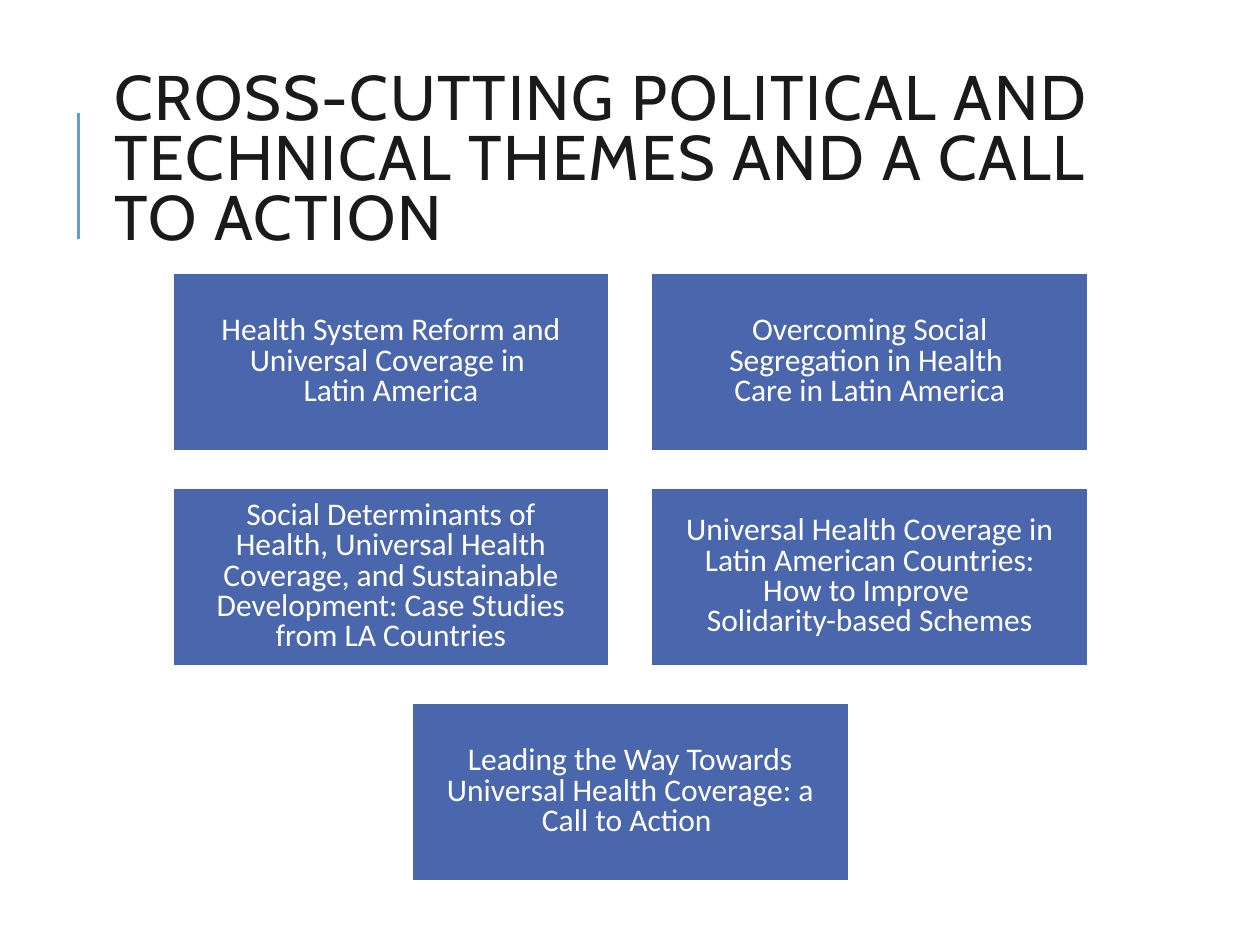
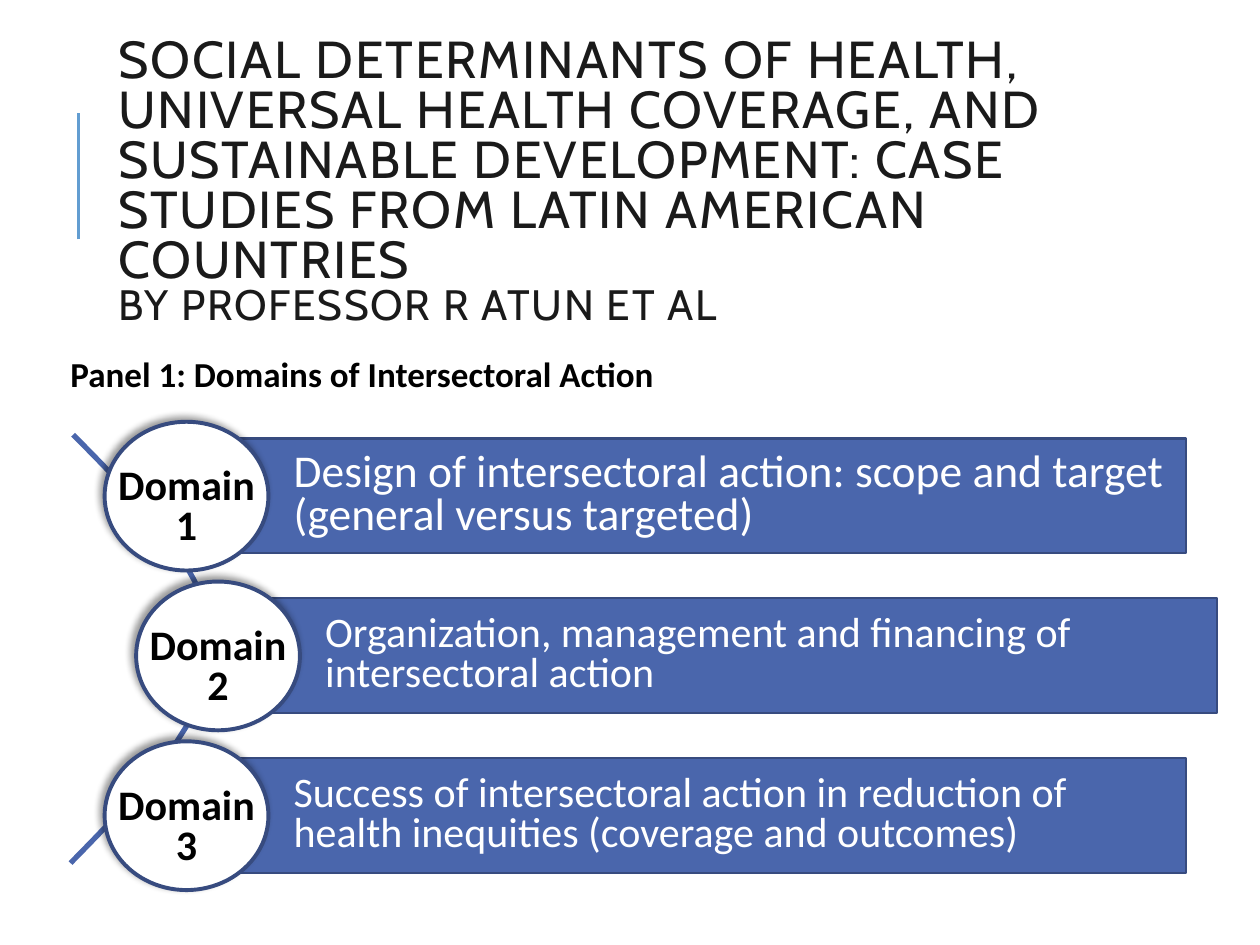
"""Build two slides on universal health coverage themes and domains of action."""
from lxml import etree
from pptx import Presentation
from pptx.dml.color import RGBColor
from pptx.enum.shapes import MSO_CONNECTOR, MSO_SHAPE
from pptx.enum.text import MSO_ANCHOR, MSO_AUTO_SIZE, PP_ALIGN
from pptx.oxml.ns import qn
from pptx.util import Pt

RECTANGLE, OVAL = MSO_SHAPE.RECTANGLE, MSO_SHAPE.OVAL
STRAIGHT = MSO_CONNECTOR.STRAIGHT
MIDDLE, TOP = MSO_ANCHOR.MIDDLE, MSO_ANCHOR.TOP
LEFT, CENTER = PP_ALIGN.LEFT, PP_ALIGN.CENTER
FIT_TEXT = MSO_AUTO_SIZE.SHAPE_TO_FIT_TEXT

WHITE = RGBColor(0xFF, 0xFF, 0xFF)
BLACK = RGBColor(0x00, 0x00, 0x00)
TITLE_INK = RGBColor(0x1A, 0x1A, 0x1A)
ACCENT = RGBColor(0x62, 0x9D, 0xD1)
BLUE = RGBColor(0x4A, 0x66, 0xAC)
DARK_BLUE = RGBColor(0x37, 0x4B, 0x7F)
TITLE_FONT, BODY_FONT = "Cabin", "Calibri"


def write_text(shape, pieces, color, font=BODY_FONT, align=LEFT, anchor=MIDDLE,
               insets=(7.2, 3.6, 7.2, 3.6), wrap=True, bold=False, line_spacing=0.8, tracking=0):
    """Fill a shape with (text, size) pieces, turning newlines into line breaks."""
    frame = shape.text_frame
    frame.word_wrap = wrap
    frame.vertical_anchor = anchor
    frame.margin_left, frame.margin_top, frame.margin_right, frame.margin_bottom = map(Pt, insets)
    paragraph = frame.paragraphs[0]
    paragraph.alignment = align
    paragraph.line_spacing = line_spacing
    for text, size in pieces:
        for index, line in enumerate(text.split("\n")):
            if index:
                paragraph.add_line_break()
            if not line:
                continue
            run = paragraph.add_run()
            run.text = line
            run.font.name = font
            run.font.size = Pt(size)
            run.font.bold = bold
            run.font.color.rgb = color
            if tracking:
                run.font._element.set("spc", str(tracking * 100))


def add_box(slide, kind, bounds, fill, line, line_width):
    """Add a filled and outlined preset shape without a shadow."""
    shape = slide.shapes.add_shape(kind, *map(Pt, bounds))
    shape.shadow.inherit = False
    shape.fill.solid()
    shape.fill.fore_color.rgb = fill
    shape.line.color.rgb = line
    shape.line.width = Pt(line_width)
    return shape


presentation = Presentation()
presentation.slide_width, presentation.slide_height = Pt(720), Pt(540)

titles = [
    ((58.3, 33.8, 574, 118),
     [("CROSS-CUTTING POLITICAL AND TECHNICAL THEMES AND A CALL TO ACTION", 36)]),
    ((60.5, 46, 630, 118),
     [("SOCIAL DETERMINANTS OF HEALTH, UNIVERSAL HEALTH COVERAGE, AND SUSTAINABLE "
       "DEVELOPMENT: CASE STUDIES FROM LATIN AMERICAN COUNTRIES \n", 29.7),
      ("BY PROFESSOR R ATUN ET AL", 24.3)]),
]
for bounds, pieces in titles:
    slide = presentation.slides.add_slide(presentation.slide_layouts[6])
    rule = slide.shapes.add_connector(STRAIGHT, Pt(44.8), Pt(136.8), Pt(44.8), Pt(64.8))
    rule.line.color.rgb = ACCENT
    rule.line.width = Pt(1.5)
    etree.SubElement(rule._element.spPr, qn("a:effectLst"))
    title = slide.shapes.add_textbox(*map(Pt, bounds))
    write_text(title, pieces, TITLE_INK, TITLE_FONT, tracking=1)

themes_slide, domains_slide = presentation.slides

themes = [
    "Health System Reform and Universal Coverage in \nLatin America",
    "Overcoming Social Segregation in Health \nCare in Latin America",
    "Social Determinants of Health, Universal Health Coverage, and Sustainable "
    "Development: Case Studies from LA Countries",
    "Universal Health Coverage in Latin American Countries: How to Improve \n"
    "Solidarity-based Schemes",
    "Leading the Way Towards Universal Health Coverage: a Call to Action ",
]
for index, theme in enumerate(themes):
    row, column = divmod(index, 2)
    if index == len(themes) - 1:
        column = 0.5
    bounds = (98.6 + column * 273.6, 156.2 + row * 122.8, 249.6, 101.5)
    box = add_box(themes_slide, RECTANGLE, bounds, BLUE, WHITE, 1.25)
    write_text(box, [(theme, 18)], WHITE, align=CENTER, insets=(14.4, 5, 14.4, 5))

panel = domains_slide.shapes.add_textbox(Pt(33.1), Pt(198), Pt(359.3), Pt(31.7))
write_text(panel, [("Panel 1: Domains of Intersectoral Action", 20)], BLACK,
           anchor=TOP, wrap=False, bold=True, line_spacing=1)
panel.text_frame.auto_size = FIT_TEXT

curves = [
    [(41.8, 248.4), (81.4, 288.7), (121.7, 329), (121, 369.4)],
    [(121, 369.4), (121, 410.4), (80.6, 452.2), (40.3, 493.2)],
]
STEPS = 16
arc_points = []
for curve in curves:
    for step in range(1, STEPS + 1):
        t = step / STEPS
        weights = ((1 - t) ** 3, 3 * t * (1 - t) ** 2, 3 * t ** 2 * (1 - t), t ** 3)
        arc_points.append(tuple(Pt(sum(w * point[axis] for w, point in zip(weights, curve)))
                                for axis in (0, 1)))
builder = domains_slide.shapes.build_freeform(Pt(curves[0][0][0]), Pt(curves[0][0][1]))
builder.add_line_segments(arc_points, close=False)
arc = builder.convert_to_shape()
arc.shadow.inherit = False
arc.fill.background()
arc.line.color.rgb = BLUE
arc.line.width = Pt(3)

domains = [
    ("Design of intersectoral action: scope and target (general versus targeted)", 26, 0),
    ("Organization, management and financing of intersectoral action", 24, 18),
    ("Success of intersectoral action in reduction of health inequities "
     "(coverage and outcomes)", 24, 0),
]
for index, (description, size, indent) in enumerate(domains):
    left, top = 59.8 + indent, 241 + index * 91.3
    bar = add_box(domains_slide, RECTANGLE, (left + 64.8, top + 9.6, 553, 65.5),
                  BLUE, DARK_BLUE, 1.25)
    write_text(bar, [(description, size)], WHITE, insets=(43.2, 3.6, 7.2, 3.6))

    circle = add_box(domains_slide, OVAL, (left, top, 93.6, 85), WHITE, DARK_BLUE, 2.25)
    effects = circle._element.spPr.find(qn("a:effectLst"))
    shadow = etree.SubElement(effects, qn("a:outerShdw"), blurRad=str(Pt(4)), dist=str(Pt(3)),
                              dir=str(225 * 60000), algn="br", rotWithShape="0")
    shade = etree.SubElement(shadow, qn("a:srgbClr"), val=str(BLACK))
    etree.SubElement(shade, qn("a:alpha"), val="40000")
    write_text(circle, [(f"Domain\n{index + 1}", 24)], BLACK, align=CENTER,
               insets=(0, 14.4, 0, 0), wrap=False, bold=True)

presentation.save("out.pptx")
